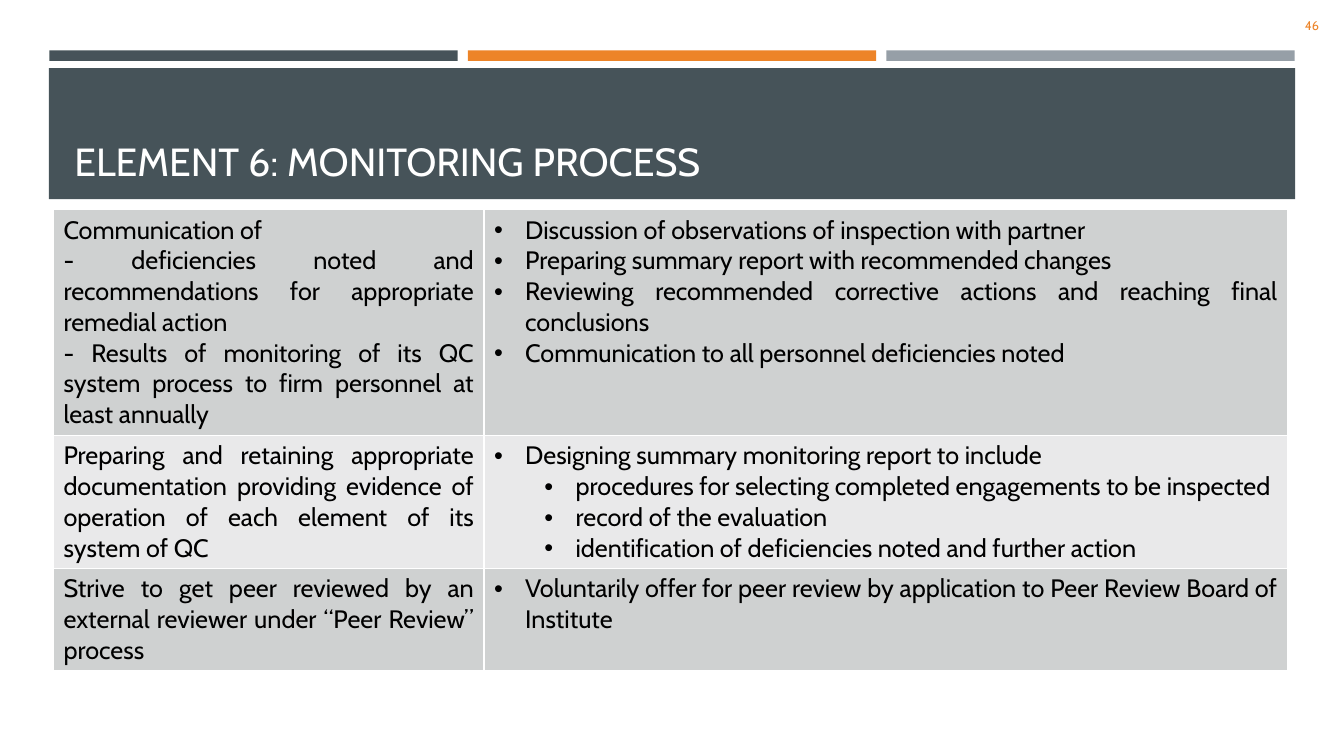
from dataclasses import dataclass

from lxml import etree
from pptx import Presentation
from pptx.dml.color import RGBColor
from pptx.enum.shapes import MSO_SHAPE
from pptx.enum.text import MSO_ANCHOR, PP_ALIGN
from pptx.oxml.ns import qn
from pptx.util import Emu, Inches, Pt

RECTANGLE = MSO_SHAPE.RECTANGLE
LEFT, RIGHT, JUSTIFY = PP_ALIGN.LEFT, PP_ALIGN.RIGHT, PP_ALIGN.JUSTIFY
MIDDLE, BOTTOM = MSO_ANCHOR.MIDDLE, MSO_ANCHOR.BOTTOM

FONT = "Cabin"
SLATE, ORANGE, GRAY = "465359", "ED8428", "969FA7"
WHITE, BLACK = "FFFFFF", "000000"
BAND_DARK, BAND_LIGHT = "CFD1D1", "E9E9EA"

# The slide is a grid of 133.3 columns by 75 rows
GRID_UNIT = Inches(0.1)
SLIDE_COLUMNS, SLIDE_ROWS = 133.3, 75
BAR_LEFT, BAR_WIDTH, BAR_PITCH = 4.9, 40.5, 41.5
TABLE_COLUMNS = (42.7, 79.7)
BULLET_INDENT, LEVEL_INDENT = 3.1, 5


@dataclass
class Area:
    left: float
    top: float
    width: float
    height: float

    def box(self) -> tuple:
        return tuple(units(n) for n in (self.left, self.top, self.width, self.height))


@dataclass
class Line:
    text: str
    level: int | None = None  # bullet level; None means no bullet


@dataclass
class Practice:
    requirement: list[Line]
    actions: list[Line]
    height: float
    fill: str


PRACTICES = [
    Practice(
        [Line("Communication of"),
         Line("- deficiencies noted and recommendations for appropriate remedial action"),
         Line("- Results of monitoring of its QC system process to firm personnel at least annually")],
        [Line("Discussion of observations of inspection with partner", 0),
         Line("Preparing summary report with recommended changes", 0),
         Line("Reviewing recommended corrective actions and reaching final conclusions", 0),
         Line("Communication to all personnel deficiencies noted", 0)],
        22.4, BAND_DARK),
    Practice(
        [Line("Preparing and retaining appropriate documentation providing evidence of "
              "operation of each element of its system of QC")],
        [Line("Designing summary monitoring report to include", 0),
         Line("procedures for selecting completed engagements to be inspected", 1),
         Line("record of the evaluation", 1),
         Line("identification of deficiencies noted and further action", 1)],
        13.2, BAND_LIGHT),
    Practice(
        [Line("Strive to get peer reviewed by an external reviewer under “Peer Review” process")],
        [Line("Voluntarily offer for peer review by application to Peer Review Board of "
              "Institute", 0)],
        10.1, BAND_DARK),
]


def units(count: float) -> Emu:
    return Emu(round(count * GRID_UNIT))


def color(value: str) -> RGBColor:
    return RGBColor.from_string(value)


def add_block(slide, area: Area, fill: str) -> None:
    block = slide.shapes.add_shape(RECTANGLE, *area.box())
    block.shadow.inherit = False
    block.fill.solid()
    block.fill.fore_color.rgb = color(fill)
    block.line.fill.background()


def write(paragraph, text: str, size: float, ink: str, align) -> None:
    run = paragraph.add_run()
    run.text = text
    paragraph.alignment = align
    for font in (paragraph.font, run.font):
        font.name = FONT
        font.size = Pt(size)
        font.color.rgb = color(ink)


def add_label(slide, area: Area, text: str, size: float, ink: str, align, anchor) -> None:
    frame = slide.shapes.add_textbox(*area.box()).text_frame
    frame.word_wrap = True
    frame.vertical_anchor = anchor
    write(frame.paragraphs[0], text, size, ink, align)


def add_bullet(paragraph, level: int) -> None:
    paragraph.level = level
    properties = paragraph._p.get_or_add_pPr()
    properties.set("marL", str(units(BULLET_INDENT + level * LEVEL_INDENT)))
    properties.set("indent", str(-units(BULLET_INDENT)))
    etree.SubElement(properties, qn("a:buFont"), typeface="Arial")
    etree.SubElement(properties, qn("a:buChar"), char="•")


def add_borders(cell) -> None:
    properties = cell._tc.get_or_add_tcPr()
    for side in ("a:lnL", "a:lnR", "a:lnT", "a:lnB"):
        border = etree.SubElement(properties, qn(side), w=str(Pt(1)))
        solid = etree.SubElement(border, qn("a:solidFill"))
        etree.SubElement(solid, qn("a:srgbClr"), val=WHITE)


def fill_cell(cell, lines: list[Line], fill: str) -> None:
    add_borders(cell)
    cell.fill.solid()
    cell.fill.fore_color.rgb = color(fill)
    frame = cell.text_frame
    for index, line in enumerate(lines):
        paragraph = frame.add_paragraph() if index else frame.paragraphs[0]
        if line.level is not None:
            add_bullet(paragraph, line.level)
        write(paragraph, line.text, 18, BLACK, JUSTIFY)


def add_practices(slide, left: float, top: float) -> None:
    area = Area(left, top, sum(TABLE_COLUMNS), sum(p.height for p in PRACTICES))
    table = slide.shapes.add_table(len(PRACTICES), len(TABLE_COLUMNS), *area.box()).table
    table.first_row = False
    table.horz_banding = False
    for column, width in zip(table.columns, TABLE_COLUMNS):
        column.width = units(width)
    for row, practice in zip(table.rows, PRACTICES):
        row.height = units(practice.height)
        for cell, lines in zip(row.cells, (practice.requirement, practice.actions)):
            fill_cell(cell, lines, practice.fill)


def main() -> None:
    deck = Presentation()
    deck.slide_width, deck.slide_height = units(SLIDE_COLUMNS), units(SLIDE_ROWS)
    slide = deck.slides.add_slide(deck.slide_layouts[6])

    # Accent bars and title band
    for index, fill in enumerate((SLATE, ORANGE, GRAY)):
        add_block(slide, Area(BAR_LEFT + index * BAR_PITCH, 5, BAR_WIDTH, 1.05), fill)
    add_block(slide, Area(4.85, 6.75, 123.6, 13), SLATE)

    # Title and slide number
    add_label(slide, Area(6.4, 7.7, 120.6, 11.1), "ELEMENT 6: MONITORING PROCESS",
              28, WHITE, LEFT, BOTTOM)
    add_label(slide, Area(120.3, 0.5, 11.5, 4), "46", 9, ORANGE, RIGHT, MIDDLE)

    # Table of practices
    add_practices(slide, 5.3, 20.8)

    deck.save("out.pptx")


if __name__ == "__main__":
    main()
